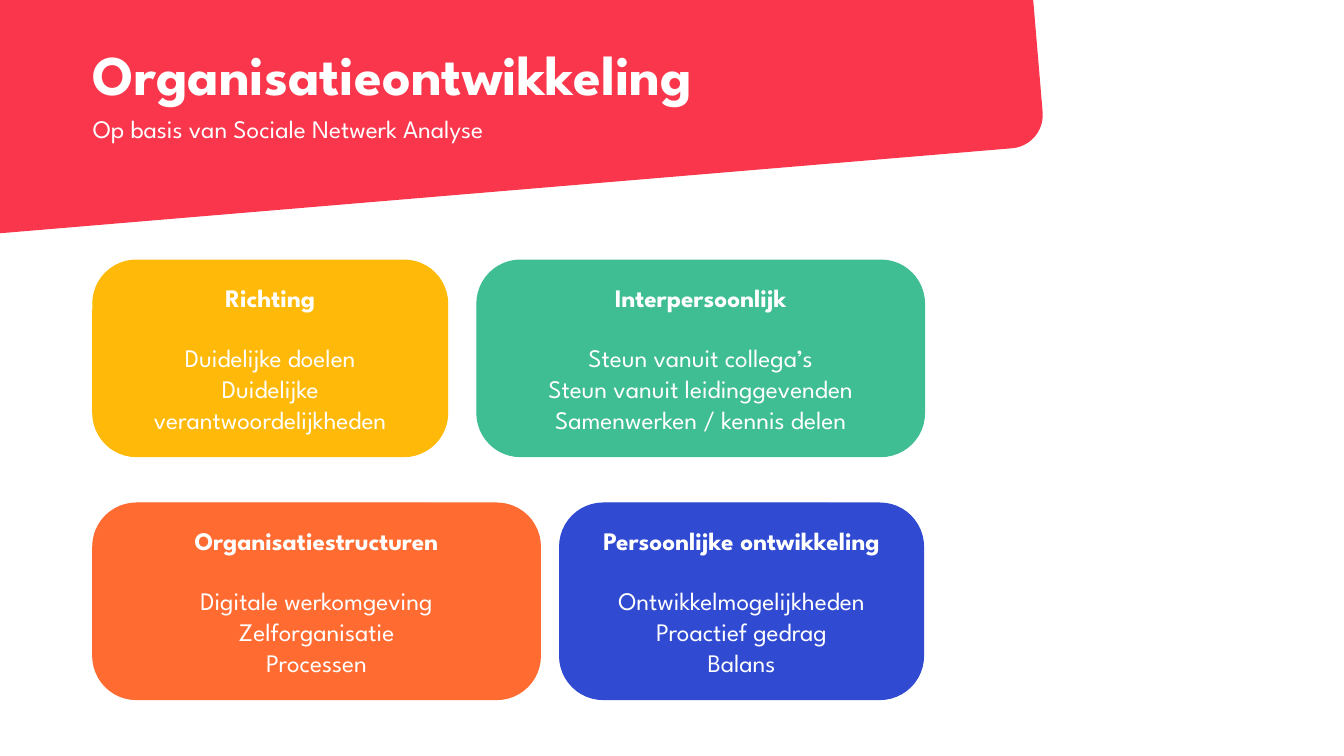
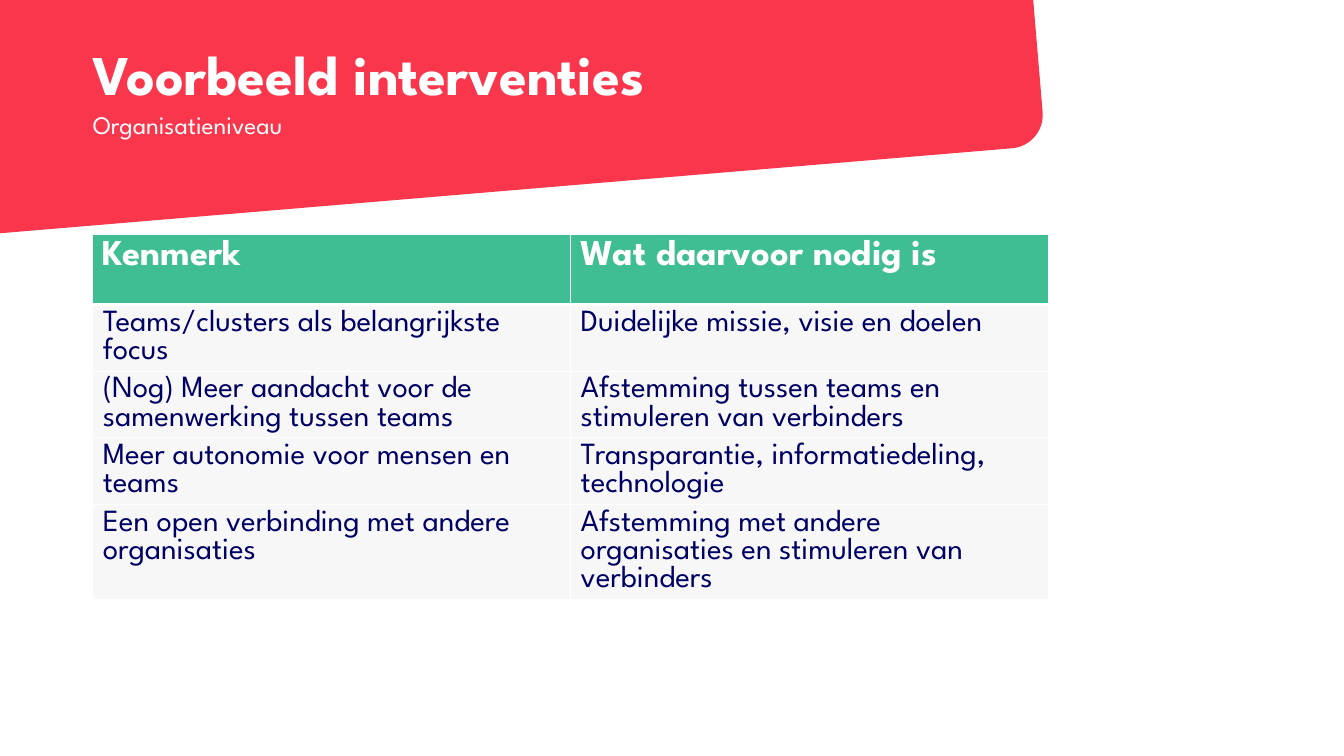
from lxml import etree
from pptx import Presentation
from pptx.dml.color import RGBColor
from pptx.enum import shapes, text
from pptx.oxml import ns
from pptx.util import Inches, Pt

FONT = "League Spartan"
COLORS = {
    "red": "F9364C",
    "orange": "FF6B31",
    "yellow": "FFB909",
    "blue": "304AD1",
    "green": "3FBD93",
    "navy": "000064",
    "grey": "F7F7F8",
    "white": "FFFFFF",
}
LEFT = 0.92
CARD_HEIGHT = 1.95
CARDS = [
    (LEFT, 4.99, 4.44, "orange", "Organisatiestructuren",
     ["Digitale werkomgeving", "Zelforganisatie", "Processen"]),
    (LEFT, 2.58, 3.52, "yellow", "Richting",
     ["Duidelijke doelen", "Duidelijke verantwoordelijkheden"]),
    (5.55, 4.99, 3.61, "blue", "Persoonlijke ontwikkeling",
     ["Ontwikkelmogelijkheden", "Proactief gedrag", "Balans"]),
    (4.73, 2.58, 4.44, "green", "Interpersoonlijk",
     ["Steun vanuit collega’s", "Steun vanuit leidinggevenden",
      "Samenwerken / kennis delen"]),
]
INTERVENTIONS = [
    ("Kenmerk", "Wat daarvoor nodig is"),
    ("Teams/clusters als belangrijkste focus",
     "Duidelijke missie, visie en doelen"),
    ("(Nog) Meer aandacht voor de samenwerking tussen teams",
     "Afstemming tussen teams en stimuleren van verbinders"),
    ("Meer autonomie voor mensen en teams",
     "Transparantie, informatiedeling, technologie"),
    ("Een open verbinding met andere organisaties",
     "Afstemming met andere organisaties en stimuleren van verbinders"),
]


def rgb(name):
    return RGBColor.from_string(COLORS[name])


def place(sp, left, top, width, height):
    sp.left, sp.top = Inches(left), Inches(top)
    sp.width, sp.height = Inches(width), Inches(height)


def write(p, content, size=18, color="white", bold=False, leading=22,
          align=text.PP_ALIGN.LEFT, after=0):
    p.alignment = align
    p.line_spacing = Pt(leading)
    p.space_before = Pt(0)
    p.space_after = Pt(after)
    r = p.add_run()
    r.text = content
    r.font.name = FONT
    r.font.size = Pt(size)
    r.font.bold = bold
    r.font.color.rgb = rgb(color)


def add_block(slide, left, top, width, height, color, radius):
    sp = slide.shapes.add_shape(
        shapes.MSO_SHAPE.ROUNDED_RECTANGLE,
        Inches(left), Inches(top), Inches(width), Inches(height))
    sp.adjustments[0] = radius
    sp.shadow.inherit = False
    sp.fill.solid()
    sp.fill.fore_color.rgb = rgb(color)
    sp.line.color.rgb = rgb(color)
    sp.line.width = Pt(0.75)
    return sp


def style_layout(layout, slide):
    band = add_block(slide, -1, -0.92, 11.27, 2.84, "red", 0.117)
    band.rotation = 355.2
    band.line.fill.background()
    band._element.nvSpPr.cNvPr.set("id", "20")
    layout.shapes._spTree.insert(2, band._element)
    for sp, top in zip(layout.placeholders, (0.36, 1.15)):
        place(sp, LEFT, top, 11.5, 0.79)
        tf = sp.text_frame
        tf.margin_left = tf.margin_right = 0
        tf.margin_top = tf.margin_bottom = 0
        tf.vertical_anchor = text.MSO_ANCHOR.TOP
        tf.auto_size = text.MSO_AUTO_SIZE.NONE
        tf.word_wrap = True


def add_heading(slide, title, subtitle, subtitle_top=1.15):
    write(slide.shapes.title.text_frame.paragraphs[0], title,
          size=40, bold=True, leading=50)
    sp = slide.placeholders[1]
    place(sp, LEFT, subtitle_top, 11.5, 0.79)
    p = sp.text_frame.paragraphs[0]
    pPr = p._p.get_or_add_pPr()
    pPr.set("marL", "0")
    pPr.set("indent", "0")
    etree.SubElement(pPr, ns.qn("a:buNone"))
    write(p, subtitle, leading=20)


def add_card(slide, left, top, width, color, heading, lines):
    sp = add_block(slide, left, top, width, CARD_HEIGHT, color, 0.222)
    tf = sp.text_frame
    tf.word_wrap = True
    tf.vertical_anchor = text.MSO_ANCHOR.MIDDLE
    tf.margin_left = tf.margin_right = Inches(0.1)
    tf.margin_top = tf.margin_bottom = Inches(0.1)
    center = text.PP_ALIGN.CENTER
    write(tf.paragraphs[0], heading, bold=True, align=center, after=21)
    for line in lines:
        write(tf.add_paragraph(), line, align=center)


def set_borders(cell, **widths):
    tcPr = cell._tc.get_or_add_tcPr()
    for i, side in enumerate(("L", "R", "T", "B")):
        ln = etree.Element(ns.qn(f"a:ln{side}"), w=str(Pt(widths.get(side, 1))))
        fill = etree.SubElement(ln, ns.qn("a:solidFill"))
        etree.SubElement(fill, ns.qn("a:srgbClr"), val=COLORS["white"])
        tcPr.insert(i, ln)


def add_interventions(slide, rows):
    table = slide.shapes.add_table(
        len(rows), 2, Inches(LEFT), Inches(2.33), Inches(9.48),
        Inches(3.21)).table
    for i, row in enumerate(rows):
        header = i == 0
        table.rows[i].height = Inches(0.69 if header else 0.63)
        size = 26 if header else 22
        for j, content in enumerate(row):
            cell = table.cell(i, j)
            cell.fill.solid()
            cell.fill.fore_color.rgb = rgb("green" if header else "grey")
            set_borders(cell, T=3 if i == 1 else 1, B=3 if header else 1)
            write(cell.text_frame.paragraphs[0], content, size=size,
                  color="white" if header else "navy", bold=header,
                  leading=round(size * 0.92, 1))


def main():
    prs = Presentation()
    prs.slide_width, prs.slide_height = Inches(13.33), Inches(7.5)
    layout = prs.slide_layouts[1]

    development = prs.slides.add_slide(layout)
    style_layout(layout, development)
    add_heading(development, "Organisatieontwikkeling",
                "Op basis van Sociale Netwerk Analyse")
    for card in CARDS:
        add_card(development, *card)

    examples = prs.slides.add_slide(layout)
    add_heading(examples, "Voorbeeld interventies", "Organisatieniveau",
                subtitle_top=1.11)
    add_interventions(examples, INTERVENTIONS)

    prs.save("out.pptx")


if __name__ == "__main__":
    main()
